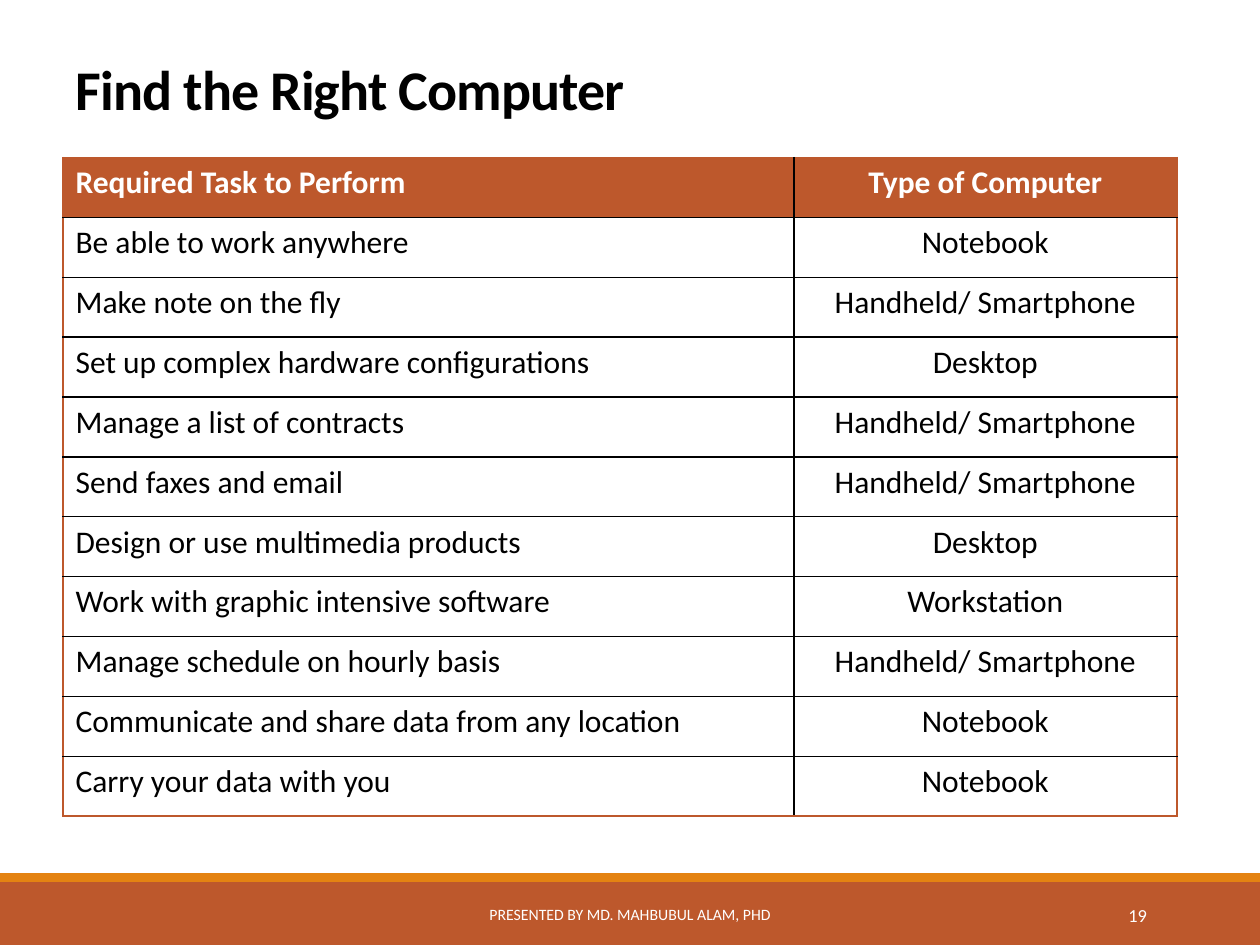
import pptx
import pptx.util
import pptx.dml.color
import pptx.enum.shapes
import pptx.enum.text
import pptx.oxml.ns
import lxml.etree

TITLE = "Find the Right Computer"
FOOTER = "PRESENTED BY MD. MAHBUBUL ALAM, PHD"
PAGE_NUMBER = "19"
ROWS = [
    ("Required Task to Perform", "Type of Computer"),
    ("Be able to work anywhere", "Notebook"),
    ("Make note on the fly", "Handheld/ Smartphone"),
    ("Set up complex hardware configurations", "Desktop"),
    ("Manage a list of contracts", "Handheld/ Smartphone"),
    ("Send faxes and email", "Handheld/ Smartphone"),
    ("Design or use multimedia products", "Desktop"),
    ("Work with graphic intensive software", "Workstation"),
    ("Manage schedule on hourly basis", "Handheld/ Smartphone"),
    ("Communicate and share data from any location", "Notebook"),
    ("Carry your data with you", "Notebook"),
]
WIDTH, HEIGHT = 10, 7.5
COLUMNS = (5.8, 3.04)
TABLE_LEFT, TABLE_TOP, TABLE_HEIGHT = 0.5, 1.25, 5.23
BAND_TOP, STRIPE_HEIGHT = 7, 0.07
FOOTER_TOP, FOOTER_HEIGHT = 7.06, 0.4
RUST, ORANGE, BLACK, WHITE = "BD582C", "E48312", "000000", "FFFFFF"
ALIGN = pptx.enum.text.PP_ALIGN
ANCHOR = pptx.enum.text.MSO_ANCHOR


def color(value):
    """Turn a hex string into a colour."""
    return pptx.dml.color.RGBColor.from_string(value)


def inches(*values):
    """Turn numbers into lengths."""
    return [pptx.util.Inches(value) for value in values]


def write(frame, text, size=18, ink=BLACK, bold=False, align=ALIGN.LEFT, anchor=ANCHOR.TOP,
          line_spacing=None, tracking=None):
    """Put one formatted paragraph in a text frame or table cell."""
    frame.vertical_anchor = anchor
    para = getattr(frame, "text_frame", frame).paragraphs[0]
    para.alignment = align
    para.line_spacing = line_spacing
    span = para.add_run()
    span.text = text
    span.font.name = "Calibri"
    span.font.size = pptx.util.Pt(size)
    span.font.bold = bold
    span.font.color.rgb = color(ink)
    if tracking is not None:
        span.font._element.set("spc", str(round(tracking * 100)))


def add_bar(page, top, height, fill):
    """Draw a band across the full slide width."""
    bar = page.shapes.add_shape(pptx.enum.shapes.MSO_SHAPE.RECTANGLE, *inches(0, top, WIDTH, height))
    bar.shadow.inherit = False
    bar.fill.solid()
    bar.fill.fore_color.rgb = color(fill)
    bar.line.fill.background()


def add_label(page, place, text, **style):
    """Add a wrapped text box."""
    box = page.shapes.add_textbox(*inches(*place))
    box.text_frame.word_wrap = True
    write(box.text_frame, text, anchor=ANCHOR.MIDDLE, ink=WHITE, **style)


def set_borders(cell, **edges):
    """Draw one-point cell borders, given as side=colour."""
    props = cell._tc.get_or_add_tcPr()
    qn = pptx.oxml.ns.qn
    for side, value in edges.items():
        line = lxml.etree.SubElement(props, qn("a:ln" + side), w=str(pptx.util.Pt(1)))
        fill = lxml.etree.SubElement(line, qn("a:solidFill"))
        lxml.etree.SubElement(fill, qn("a:srgbClr"), val=value)


def add_task_table(page):
    """Build the table with a filled header and a rust outline."""
    frame = page.shapes.add_table(len(ROWS), len(COLUMNS),
                                  *inches(TABLE_LEFT, TABLE_TOP, sum(COLUMNS), TABLE_HEIGHT))
    table = frame.table
    table.horz_banding = False
    for column, width in zip(table.columns, COLUMNS):
        column.width = pptx.util.Inches(width)
    last_row, last_column = len(ROWS) - 1, len(COLUMNS) - 1
    for i, texts in enumerate(ROWS):
        header = i == 0
        for j, text in enumerate(texts):
            cell = table.cell(i, j)
            write(cell, text, bold=header, ink=WHITE if header else BLACK,
                  align=ALIGN.CENTER if j else ALIGN.LEFT)
            set_borders(cell,
                        L=BLACK if j else RUST,
                        R=RUST if j == last_column else BLACK,
                        T=RUST if header else BLACK,
                        B=RUST if i == last_row else BLACK)
            if header:
                cell.fill.solid()
                cell.fill.fore_color.rgb = color(RUST)
            else:
                cell.fill.background()


def main():
    """Build and save the slide."""
    deck = pptx.Presentation()
    deck.slide_width, deck.slide_height = inches(WIDTH, HEIGHT)
    page = deck.slides.add_slide(deck.slide_layouts[5])
    add_bar(page, BAND_TOP, HEIGHT - BAND_TOP, RUST)
    add_bar(page, BAND_TOP - STRIPE_HEIGHT, STRIPE_HEIGHT, ORANGE)
    title = page.shapes.title
    title.left, title.top, title.width, title.height = inches(0.5, 0.42, 8.7, 0.6)
    write(title.text_frame, TITLE, size=32, bold=True, anchor=ANCHOR.BOTTOM,
          line_spacing=0.85, tracking=-0.5)
    add_task_table(page)
    add_label(page, (3.02, FOOTER_TOP, 3.96, FOOTER_HEIGHT), FOOTER, size=9, align=ALIGN.CENTER)
    add_label(page, (8.12, FOOTER_TOP, 1.08, FOOTER_HEIGHT), PAGE_NUMBER, size=10.5, align=ALIGN.RIGHT)
    deck.save("out.pptx")


if __name__ == "__main__":
    main()
